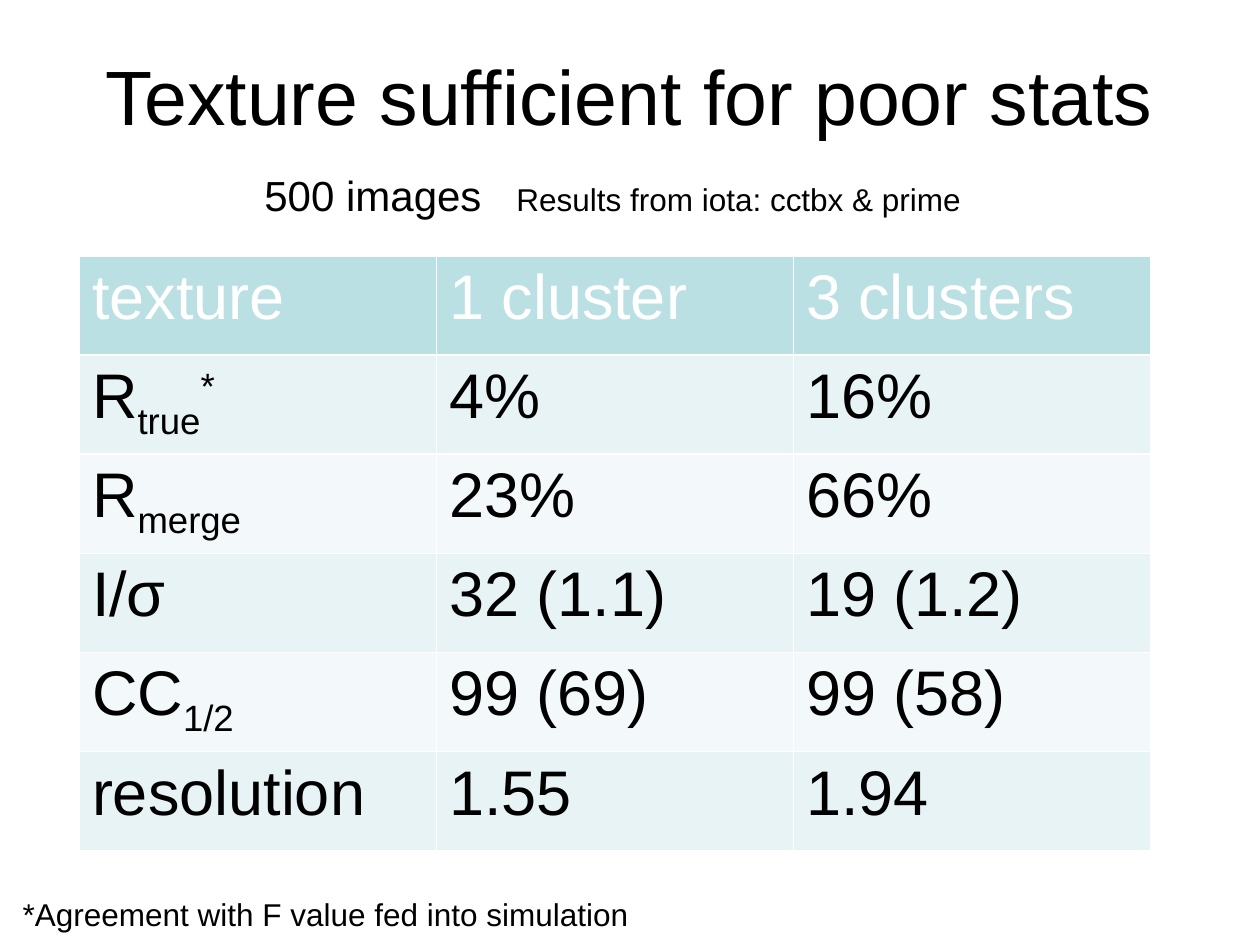
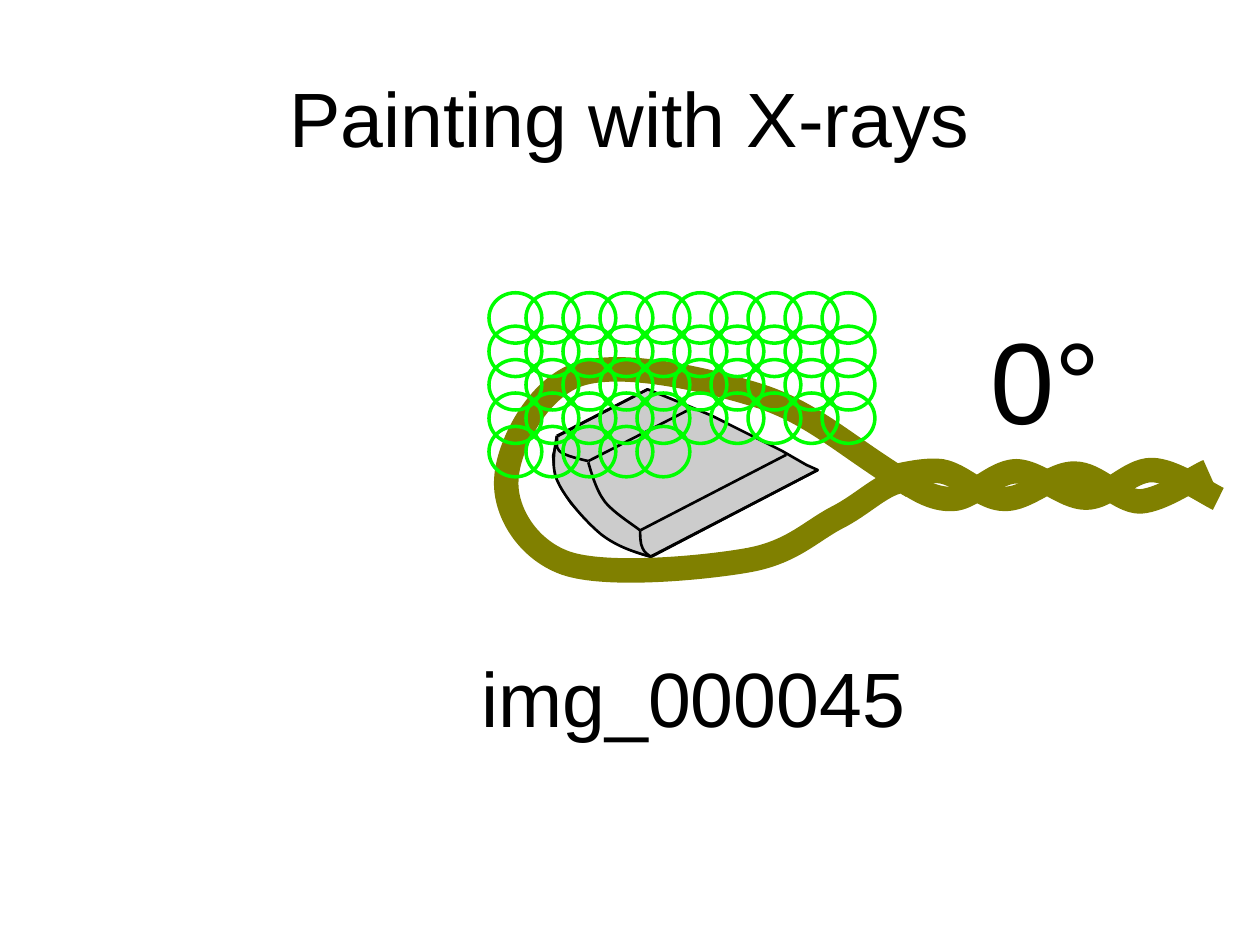
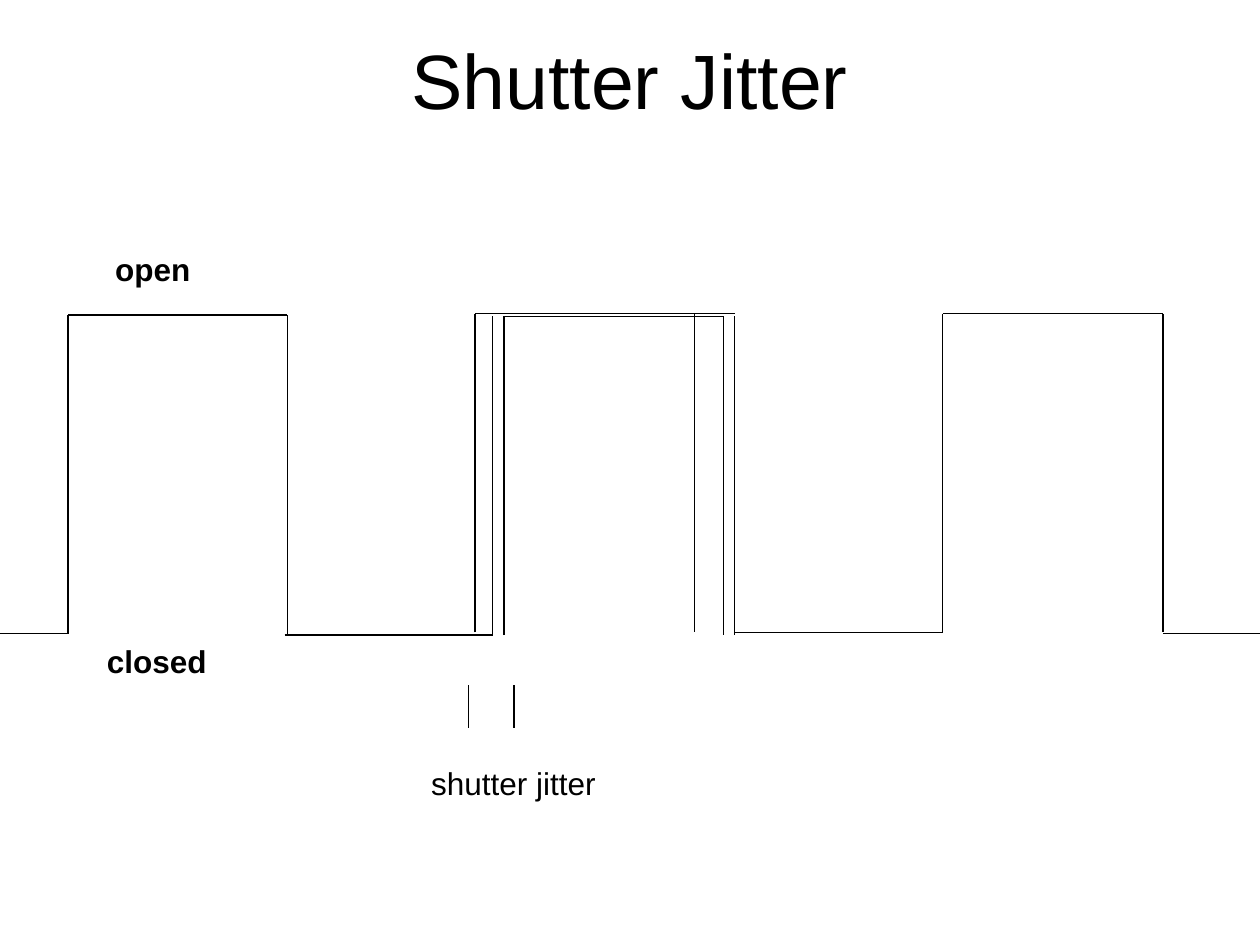
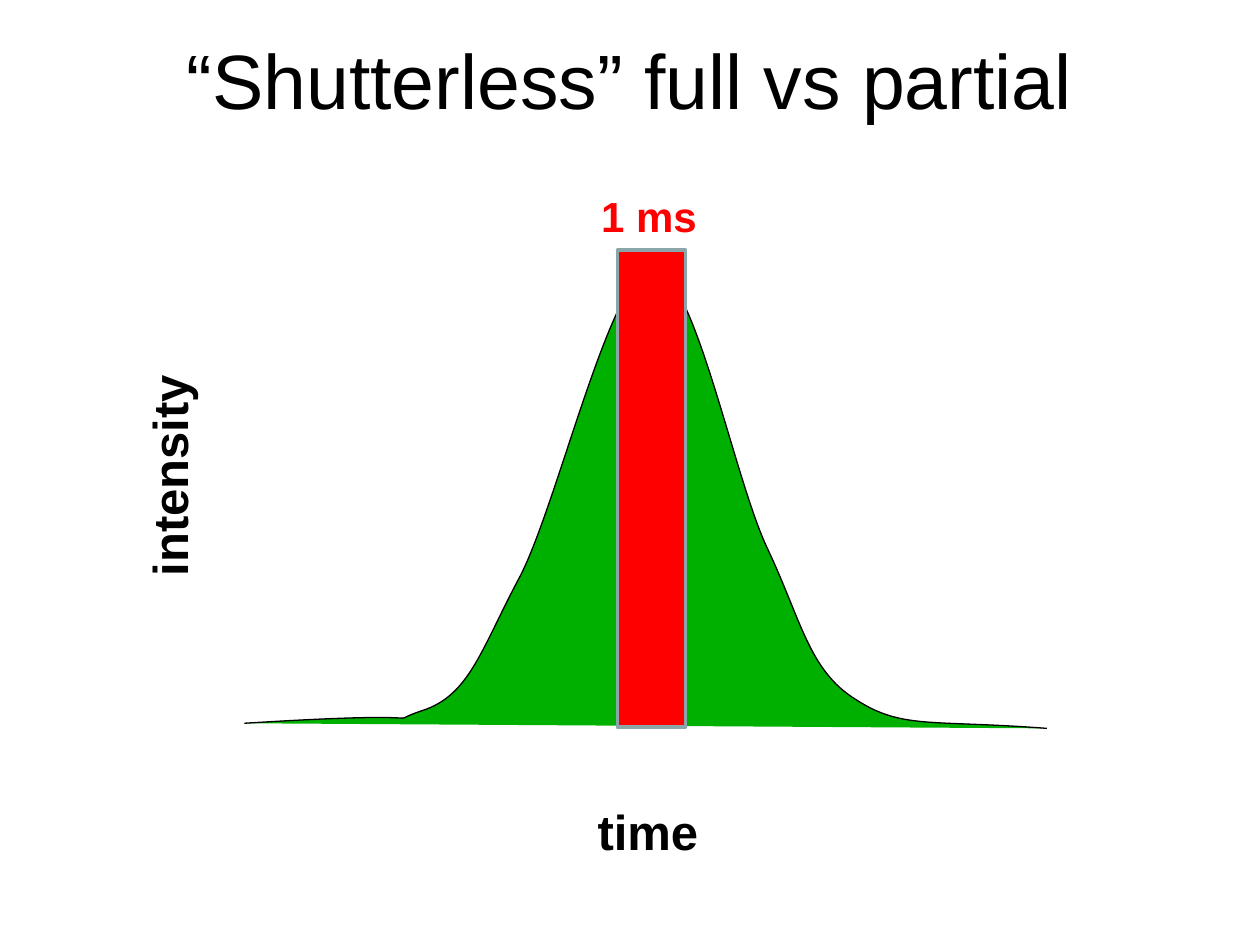
from lxml.etree import SubElement as Sub
from pptx import Presentation
from pptx.dml.color import RGBColor
from pptx.enum.shapes import MSO_CONNECTOR as Link, MSO_SHAPE as Kind
from pptx.enum.text import MSO_ANCHOR as Anchor, MSO_AUTO_SIZE as Auto, PP_ALIGN as Align
from pptx.oxml.ns import qn
from pptx.util import Pt

BLACK, WHITE, RED = "000000", "FFFFFF", "FF0000"
HEAD, BANDS = "BBE0E3", ("F3F9FA", "E7F3F4")
GREY, OLIVE, LIME, GREEN, STEEL = "CCCCCC", "808000", "00FF00", "00B000", "8AA6A8"

TITLES = [
    ("Texture sufficient for poor stats", (0, 0, 720, 108)),
    ("Painting with X-rays", (36, 21.6, 648, 90)),
    ("Shutter Jitter", (54, 0, 612, 90)),
    ("“Shutterless” full vs partial", (54, 0, 612, 90)),
]

STATS = [
    ["texture", "1 cluster", "3 clusters"],
    [[("R", 0), ("true", -25), ("*", 30)], "4%", "16%"],
    [[("R", 0), ("merge", -25)], "23%", "66%"],
    ["I/σ", "32 (1.1)", "19 (1.2)"],
    [[("CC", 0), ("1/2", -25)], "99 (69)", "99 (58)"],
    ["resolution", "1.55", "1.94"],
]
GRID = (45.4, 146.2, 612, 340)

CRYSTAL = [
    (467.3, 268.6), (372.2, 318.2), (367.2, 316.8), (359.3, 313.9), (350.6, 309.6),
    (342.7, 303.8), (334.8, 296.6), (326.2, 287.3), (321.1, 279.4), (317.5, 272.2),
    (316.8, 267.1), (316.1, 260.6), (317.5, 254.9), (319, 249.1), (370.1, 222.5),
    (389.5, 230.4), (406.8, 237.6), (425.5, 247), (447.1, 257.8), (460.8, 265.7),
]
RIDGES = [
    (467.3, 268.6, 371.5, 318.2), (449.3, 259.9, 365.8, 303.1),
    (395.3, 233.3, 336.2, 263.5), (370.1, 222.5, 318.2, 249.1),
]
EDGES = [
    [(372.2, 318.2), (362.2, 315.4), (352.8, 312.5), (343.4, 305.3), (334.8, 298.1),
     (323.3, 285.1), (319, 275.8), (314.6, 267.1), (316.8, 257.8), (318.2, 249.1)],
    [(372.2, 318.2), (370.8, 317.5), (367.9, 315.4), (367.2, 313.2),
     (365.8, 311), (365.8, 305.3), (365.8, 303.1)],
    [(365.8, 303.1), (362.2, 300.2), (350.6, 293), (345.6, 286.6),
     (340.6, 280.1), (337.7, 269.3), (336.2, 264.2)],
    [(336.2, 263.5), (333.4, 262.8), (322.6, 260.6), (319.7, 257.8),
     (316.8, 255.6), (319, 250.6), (318.2, 249.1)],
]
CORDS = [
    [(521.3, 277.9), (486.7, 257.8), (467.3, 237.6), (435.6, 226.8), (403.9, 216.7),
     (355.7, 205.9), (331.2, 213.8), (306.7, 221.8), (290.2, 255.6), (289.4, 273.6),
     (288, 291.6), (301, 313.9), (323.3, 321.8), (346.3, 329.8), (401, 324.7),
     (426.2, 320.4), (452.2, 316.1), (463, 303.8), (478.1, 295.9), (492.5, 288.7),
     (503.3, 277.2), (514.1, 275), (525.6, 272.9), (527, 273.6), (529.2, 275)],
    [(511.9, 271.4), (522, 278.6), (532.8, 285.8), (544.3, 285.1), (555.1, 285.1),
     (567.4, 270), (580.3, 269.3), (593.3, 269.3), (607.7, 284.4), (620.6, 284.4),
     (633.6, 284.4), (645.1, 268.6), (658.1, 268.6), (670.3, 268.6), (689.8, 282.2),
     (696.2, 285.1)],
    [(501.8, 274.3), (507.6, 273.6), (525.6, 267.8), (537.8, 269.3), (550.1, 271.4),
     (561.6, 285.1), (573.8, 285.1), (586.8, 285.8), (601.9, 270), (614.2, 270.7),
     (627.1, 270.7), (639.4, 286.6), (651.6, 286.6), (664.6, 285.8), (683.3, 272.2),
     (690.5, 269.3)],
]
SPOTS = (10, 10, 10, 10, 5)

PULSES = [
    (38.9, 164.2, 180, 180, 362.2), (281.5, 419.8, 179.3, 180.7, 362.9),
    (538.6, 664.6, 179.3, 179.3, 361.4), (288, 413.3, 180.7, 180.7, 362.9),
    (271.4, 396.7, 179.3, 179.3, 361.4),
]
FLOORS = [(-86.4, 38.9, 362.2), (162.7, 281.5, 362.9),
          (419.8, 538.6, 361.4), (664.6, 789.8, 362.2)]
TICKS = (267.8, 293.8)

BELL = [
    (139.7, 413.3), (265, 405.4), (213.8, 415.4), (241.2, 406.1), (268.6, 397.4),
    (275, 370.8), (297.4, 329), (319, 286.6), (349.2, 156.2), (372.2, 153.4),
    (396, 151.2), (419, 272.2), (438.5, 313.2), (457.9, 354.2), (462.2, 383),
    (488.9, 399.6), (515.5, 416.9), (531.4, 411.1), (598.3, 416.2),
]


def paint(fill, tone):
    if tone:
        fill.solid()
        fill.fore_color.rgb = RGBColor.from_string(tone)
    else:
        fill.background()


def write(para, text, size, tone=BLACK, bold=False, base=0):
    run = para.add_run()
    run.text = text
    look = {"name": "Arial", "size": Pt(size), "bold": bold}
    for key, val in look.items():
        setattr(run.font, key, val)
    paint(run.font.fill, tone)
    if base:
        run._r.get_or_add_rPr().set("baseline", str(base * 1000))


def place(item, box):
    for key, val in zip(("left", "top", "width", "height"), box):
        setattr(item, key, Pt(val))


def label(host, box, *runs, mid=False, turn=0):
    item = host.shapes.add_textbox(*map(Pt, box))
    item.rotation = turn
    frame = item.text_frame
    frame.word_wrap = False
    frame.auto_size = Auto.SHAPE_TO_FIT_TEXT
    para = frame.paragraphs[0]
    if mid:
        para.alignment = Align.CENTER
    for run in runs:
        write(para, *run)
    return para


def style(item, fill, tone, width):
    item.shadow.inherit = False
    paint(item.fill, fill)
    paint(item.line.fill, tone)
    item.line.width = Pt(width)


def line(host, ends, width=0.75):
    item = host.shapes.add_connector(Link.STRAIGHT, *map(Pt, ends))
    paint(item.line.fill, BLACK)
    item.line.width = Pt(width)
    Sub(item._element.spPr, qn("a:effectLst"))


def trace(host, dots, fill, tone, width, close=False):
    first, *rest = [(Pt(x), Pt(y)) for x, y in dots]
    pen = host.shapes.build_freeform(*first)
    pen.add_line_segments(rest, close=close)
    item = pen.convert_to_shape()
    style(item, fill, tone, width)
    return item


def curve(host, nodes, fill, tone, width):
    item = trace(host, nodes[::3], fill, tone, width)
    route = next(item._element.iter(qn("a:path")))
    for old in route.findall(qn("a:lnTo")):
        route.remove(old)
    for i in range(1, len(nodes), 3):
        arc = Sub(route, qn("a:cubicBezTo"))
        for x, y in nodes[i:i + 3]:
            Sub(arc, qn("a:pt"), x=str(Pt(x) - item.left), y=str(Pt(y) - item.top))


def shape(host, kind, box, fill, tone):
    style(host.shapes.add_shape(kind, *map(Pt, box)), fill, tone, 2)


def texture(slide):
    cols, rows = len(STATS[0]), len(STATS)
    grid = slide.shapes.add_table(rows, cols, *map(Pt, GRID)).table
    for r, row in enumerate(STATS):
        for c, text in enumerate(row):
            cell = grid.cell(r, c)
            paint(cell.fill, BANDS[r % 2] if r else HEAD)
            parts = [(text, 0)] if isinstance(text, str) else text
            for part, base in parts:
                write(cell.text_frame.paragraphs[0], part, 36,
                      BLACK if r else WHITE, base=base)
    para = label(slide, (144, 93.6, 416.9, 36), ("500 images\t", 24),
                 ("Results from iota: cctbx & prime", 18))
    tabs = Sub(para._p.get_or_add_pPr(), qn("a:tabLst"))
    Sub(tabs, qn("a:tab"), pos=str(Pt(144)), algn="l")
    label(slide, (5.8, 507.9, 363.6, 28.8),
          ("*Agreement with F value fed into simulation", 18))


def scan(slide):
    gem = slide.shapes.add_group_shape()
    trace(gem, CRYSTAL, GREY, BLACK, 1.5, close=True)
    for ends in RIDGES:
        line(gem, ends, 1.5)
    for edge in EDGES:
        curve(gem, edge, GREY, BLACK, 1.5)
    loop = slide.shapes.add_group_shape()
    for cord in CORDS:
        curve(loop, cord, None, OLIVE, 14)
    for r, count in enumerate(SPOTS):
        full = count == max(SPOTS)
        host = slide.shapes.add_group_shape() if full else slide
        for c in range(count):
            box = (279.4 + 21.15 * c, 167.3 + 19.1 * r, 30.2, 28.8)
            shape(host, Kind.OVAL, box, None, LIME)
    para = label(slide, (522, 172.8, 115.2, 87.1), ("0°", 66))
    para._p.get_or_add_pPr().set("marL", str(Pt(36.7)))
    label(slide, (268, 368.3, 259.2, 60.5), ("img_000045", 44))


def jitter(slide):
    for left, right, y in FLOORS:
        line(slide, (left, y, right, y))
    for left, right, top, high, low in PULSES:
        line(slide, (left, top, right, top))
        line(slide, (left, low, left, high))
        line(slide, (right, high, right, low))
    for x in TICKS:
        line(slide, (x, 391.7, x, 416))
    label(slide, (58.8, 139.3, 57.6, 28.8), ("open", 18, BLACK, True))
    label(slide, (54, 363.2, 71.3, 28.8), ("closed", 18, BLACK, True))
    label(slide, (239.3, 433, 108.7, 28.8), ("shutter jitter", 18))


def partial(slide):
    label(slide, (333.8, 454.7, 72.7, 41), ("time", 28, BLACK, True), mid=True)
    label(slide, (31, 251.3, 131, 41), ("intensity", 28, BLACK, True),
          mid=True, turn=270)
    curve(slide, BELL, GREEN, BLACK, 0.75)
    pulse = slide.shapes.add_group_shape()
    shape(pulse, Kind.RECTANGLE, (352.8, 142.9, 38.9, 272.7), RED, STEEL)
    label(pulse, (336.4, 105.5, 69.8, 36), ("1 ms", 24, RED, True))


def main():
    deck = Presentation()
    deck.slide_width, deck.slide_height = Pt(720), Pt(540)
    for (text, box), draw in zip(TITLES, (texture, scan, jitter, partial)):
        slide = deck.slides.add_slide(deck.slide_layouts[5])
        title = slide.shapes.title
        place(title, box)
        title.text_frame.vertical_anchor = Anchor.MIDDLE
        para = title.text_frame.paragraphs[0]
        para.alignment = Align.CENTER
        write(para, text, 44)
        draw(slide)
    deck.save("out.pptx")


if __name__ == "__main__":
    main()
